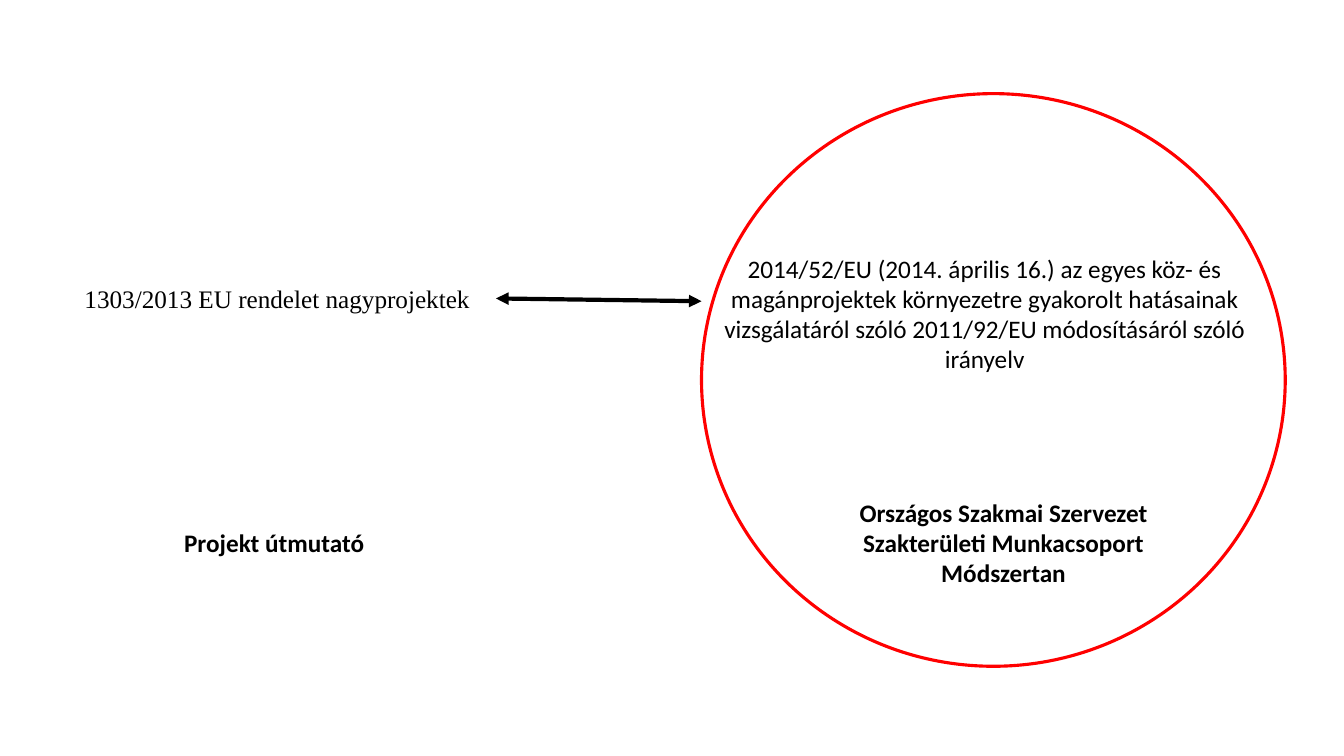
from dataclasses import dataclass

from lxml.etree import SubElement
from pptx import Presentation
from pptx.dml.color import RGBColor
from pptx.enum.shapes import MSO_CONNECTOR, MSO_SHAPE
from pptx.enum.text import MSO_AUTO_SIZE, PP_ALIGN
from pptx.oxml.ns import qn
from pptx.util import Cm, Pt


@dataclass(frozen=True)
class Theme:
    text: RGBColor = RGBColor(0, 0, 0)
    highlight: RGBColor = RGBColor(255, 0, 0)
    size: Pt = Pt(18)
    arrow_width: Pt = Pt(3)
    circle_width: Pt = Pt(2.25)
    sans: str = "Calibri"
    serif: str = "Times New Roman"


THEME = Theme()

# Content: paragraphs, place in cm (left, top, width, height), font, bold, centred, wrap
TEXTS = {
    "regulation": (["1303/2013 EU rendelet nagyprojektek"],
                   (1.88, 7.01, 10.62, 1.02), THEME.serif, False, False, False),
    "directive": (["2014/52/EU (2014. április 16.) az egyes köz- és magánprojektek "
                   "környezetre gyakorolt hatásainak vizsgálatáról szóló 2011/92/EU "
                   "módosításáról szóló irányelv"],
                  (17.4, 6.25, 14.83, 3.33), THEME.sans, False, True, True),
    "guide": (["Projekt útmutató"],
              (4.39, 13.16, 5.54, 1.02), THEME.sans, True, False, True),
    "methodology": (["Országos Szakmai Szervezet", "Szakterületi Munkacsoport", "Módszertan"],
                    (20.4, 12.4, 9.78, 2.57), THEME.sans, True, True, True),
}
CIRCLE = (17.68, 2.36, 14.71, 14.43)
ARROW_START = (12.5, 7.52)
ARROW_END = (17.68, 7.59)


def lengths(values):
    return [Cm(value) for value in values]


def add_text(page, lines, place, font, bold, centred, wrap):
    box = page.shapes.add_textbox(*lengths(place))
    frame = box.text_frame
    frame.word_wrap = wrap
    frame.auto_size = MSO_AUTO_SIZE.SHAPE_TO_FIT_TEXT
    frame.text = "\n".join(lines)
    for para in frame.paragraphs:
        para.alignment = PP_ALIGN.CENTER if centred else PP_ALIGN.LEFT
        para.font.name = font
        para.font.size = THEME.size
        para.font.bold = bold
        para.font.color.rgb = THEME.text
    return box


def add_double_arrow(page, source):
    arrow = page.shapes.add_connector(
        MSO_CONNECTOR.STRAIGHT, *lengths(ARROW_START + ARROW_END))
    arrow.begin_connect(source, 3)
    arrow.line.color.rgb = THEME.text
    arrow.line.width = THEME.arrow_width
    outline = arrow.line._get_or_add_ln()
    for end in ("a:headEnd", "a:tailEnd"):
        SubElement(outline, qn(end), type="triangle")
    SubElement(arrow._element.spPr, qn("a:effectLst"))


def add_circle(page):
    circle = page.shapes.add_shape(MSO_SHAPE.OVAL, *lengths(CIRCLE))
    circle.shadow.inherit = False
    circle.fill.background()
    circle.line.color.rgb = THEME.highlight
    circle.line.width = THEME.circle_width


def main():
    deck = Presentation()
    deck.slide_width, deck.slide_height = Cm(33.87), Cm(19.05)
    page = deck.slides.add_slide(deck.slide_layouts[6])

    # Text blocks
    boxes = {name: add_text(page, *text) for name, text in TEXTS.items()}

    # Link between the two laws, and the highlighted side
    add_double_arrow(page, boxes["regulation"])
    add_circle(page)

    deck.save("out.pptx")


if __name__ == "__main__":
    main()
